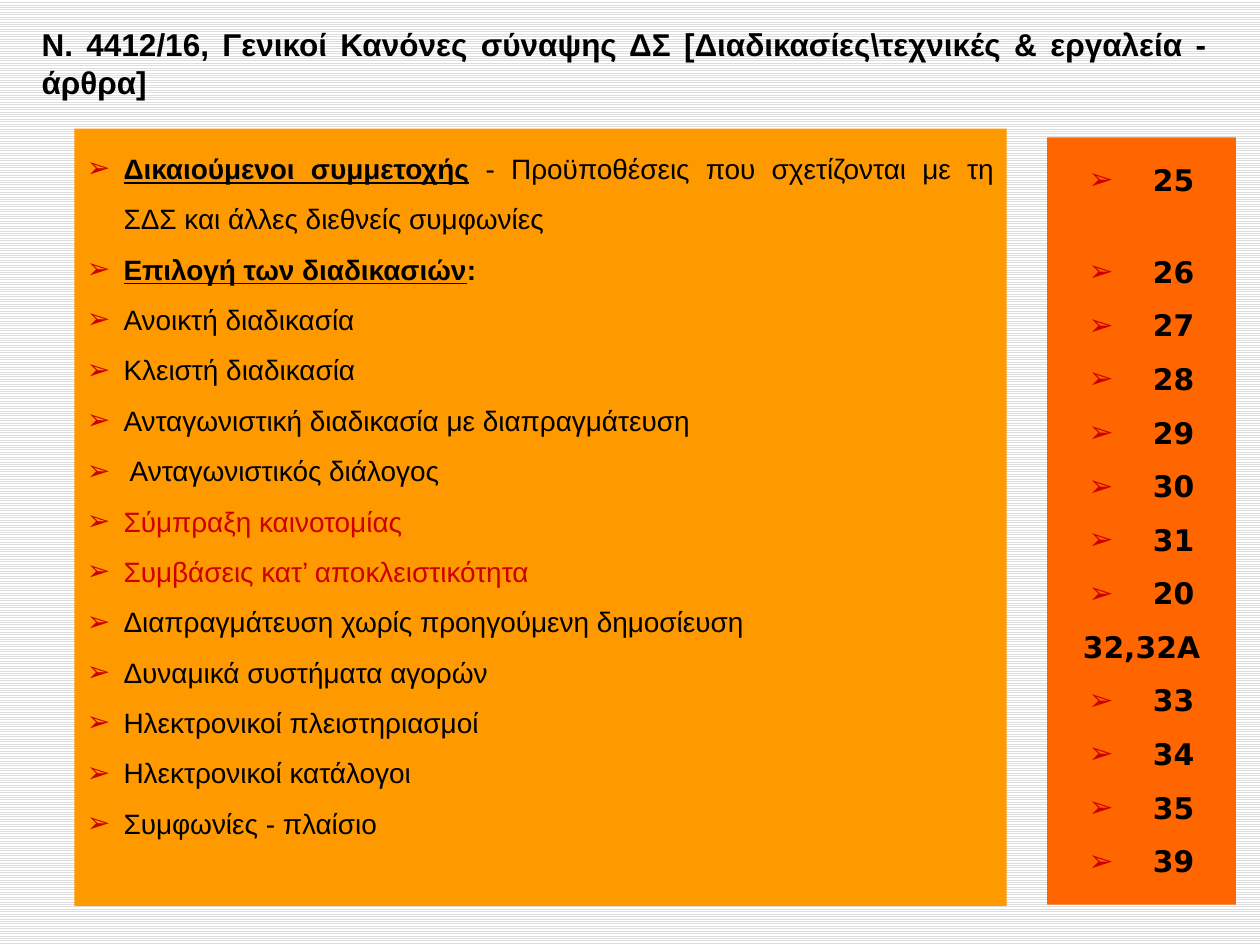
"""Build the slide on procurement procedures and their articles in law 4412/16."""
import pptx
import pptx.dml.color
import pptx.enum.dml
import pptx.enum.text
import pptx.oxml
import pptx.oxml.ns
import pptx.util
from pptx.util import Inches

BLACK, RED = "000000", "CC0000"
ALIGN = pptx.enum.text.PP_ALIGN
ANCHOR = pptx.enum.text.MSO_ANCHOR

TITLE = "Ν. 4412/16, Γενικοί Κανόνες σύναψης ΔΣ [Διαδικασίες\\τεχνικές & εργαλεία - άρθρα]"
HEADINGS = [
    ("Δικαιούμενοι συμμετοχής",
     " - Προϋποθέσεις που σχετίζονται με τη ΣΔΣ και άλλες διεθνείς συμφωνίες", False),
    ("Επιλογή των διαδικασιών", ":", True),
]
PROCEDURES = [
    ("Ανοικτή διαδικασία", BLACK),
    ("Κλειστή διαδικασία", BLACK),
    ("Ανταγωνιστική διαδικασία με διαπραγμάτευση", BLACK),
    (" Ανταγωνιστικός διάλογος", BLACK),
    ("Σύμπραξη καινοτομίας", RED),
    ("Συμβάσεις κατ’ αποκλειστικότητα", RED),
    ("Διαπραγμάτευση χωρίς προηγούμενη δημοσίευση", BLACK),
    ("Δυναμικά συστήματα αγορών", BLACK),
    ("Ηλεκτρονικοί πλειστηριασμοί", BLACK),
    ("Ηλεκτρονικοί κατάλογοι", BLACK),
    ("Συμφωνίες - πλαίσιο", BLACK),
]
UNBULLETED = "32,32Α"
ARTICLES = ["25", "26", "27", "28", "29", "30", "31", "20", UNBULLETED,
            "33", "34", "35", "39"]


def rgb(value):
    """Turn a hex string into a colour."""
    return pptx.dml.color.RGBColor.from_string(value)


def paint_background(slide):
    """Fill the slide with light horizontal lines."""
    fill = slide.background.fill
    fill.patterned()
    fill.pattern = pptx.enum.dml.MSO_PATTERN.LIGHT_HORIZONTAL
    fill.fore_color.rgb = rgb("DDDDDD")
    fill.back_color.rgb = rgb("FFFFFF")


def place(placeholder, left, top, width, height, anchor=ANCHOR.TOP, fill=None):
    """Move and format a placeholder and return its text frame."""
    placeholder.left, placeholder.top = Inches(left), Inches(top)
    placeholder.width, placeholder.height = Inches(width), Inches(height)
    if fill:
        placeholder.fill.solid()
        placeholder.fill.fore_color.rgb = rgb(fill)
    frame = placeholder.text_frame
    frame.word_wrap = True
    frame.auto_size = pptx.enum.text.MSO_AUTO_SIZE.NONE
    frame.vertical_anchor = anchor
    return frame


def add_text(paragraph, text, size=16, font="Arial", color=BLACK, bold=False, underline=False):
    """Add a formatted run to a paragraph."""
    run = paragraph.add_run()
    run.text = text
    run.font.size = pptx.util.Pt(size)
    run.font.name = font
    run.font.color.rgb = rgb(color)
    run.font.bold = bold
    run.font.underline = underline


def add_item(frame, indent, align, bullet=True, space_after=0):
    """Start a list paragraph with a hanging indent."""
    first = frame.paragraphs[0]
    paragraph = frame.add_paragraph() if first.runs else first
    paragraph.alignment = align
    paragraph.line_spacing = 1.5
    paragraph.space_before = pptx.util.Pt(0)
    paragraph.space_after = pptx.util.Pt(space_after)
    properties = paragraph._p.get_or_add_pPr()
    properties.set("marL", str(Inches(indent)))
    properties.set("indent", str(-Inches(indent)))
    namespace = pptx.oxml.ns.nsdecls("a")
    marks = [f'<a:buClr {namespace}><a:srgbClr val="{RED}"/></a:buClr>',
             f'<a:buChar {namespace} char="➢"/>'] if bullet else [f"<a:buNone {namespace}/>"]
    for mark in marks:
        properties.append(pptx.oxml.parse_xml(mark))
    return paragraph


def fill_procedures(frame):
    """List the headings and the procedures."""
    for heading, detail, bold in HEADINGS:
        item = add_item(frame, 0.29, ALIGN.JUSTIFY)
        add_text(item, heading, bold=True, underline=True)
        add_text(item, detail, bold=bold)
    for procedure, color in PROCEDURES:
        add_text(add_item(frame, 0.29, ALIGN.JUSTIFY), procedure, color=color)


def fill_articles(frame):
    """List the article numbers, with a gap beside the two-line heading."""
    for article in ARTICLES:
        item = add_item(frame, 0.51, ALIGN.CENTER, bullet=article != UNBULLETED,
                        space_after=22 if article == ARTICLES[0] else 0)
        add_text(item, article, size=17, font="DejaVu Sans", bold=True)


def main():
    """Build and save the slide."""
    deck = pptx.Presentation()
    deck.slide_width, deck.slide_height = Inches(10), Inches(7.5)
    slide = deck.slides.add_slide(deck.slide_layouts[3])
    paint_background(slide)
    title, procedures, articles = slide.placeholders

    heading = place(title, 0.23, 0.28, 9.45, 0.57, anchor=ANCHOR.BOTTOM).paragraphs[0]
    heading.alignment = ALIGN.JUSTIFY
    add_text(heading, TITLE, size=18, bold=True)
    fill_procedures(place(procedures, 0.59, 1.02, 7.4, 6.17, fill="FF9900"))
    fill_articles(place(articles, 8.31, 1.09, 1.5, 6.09, fill="FF6600"))
    deck.save("out.pptx")


if __name__ == "__main__":
    main()
